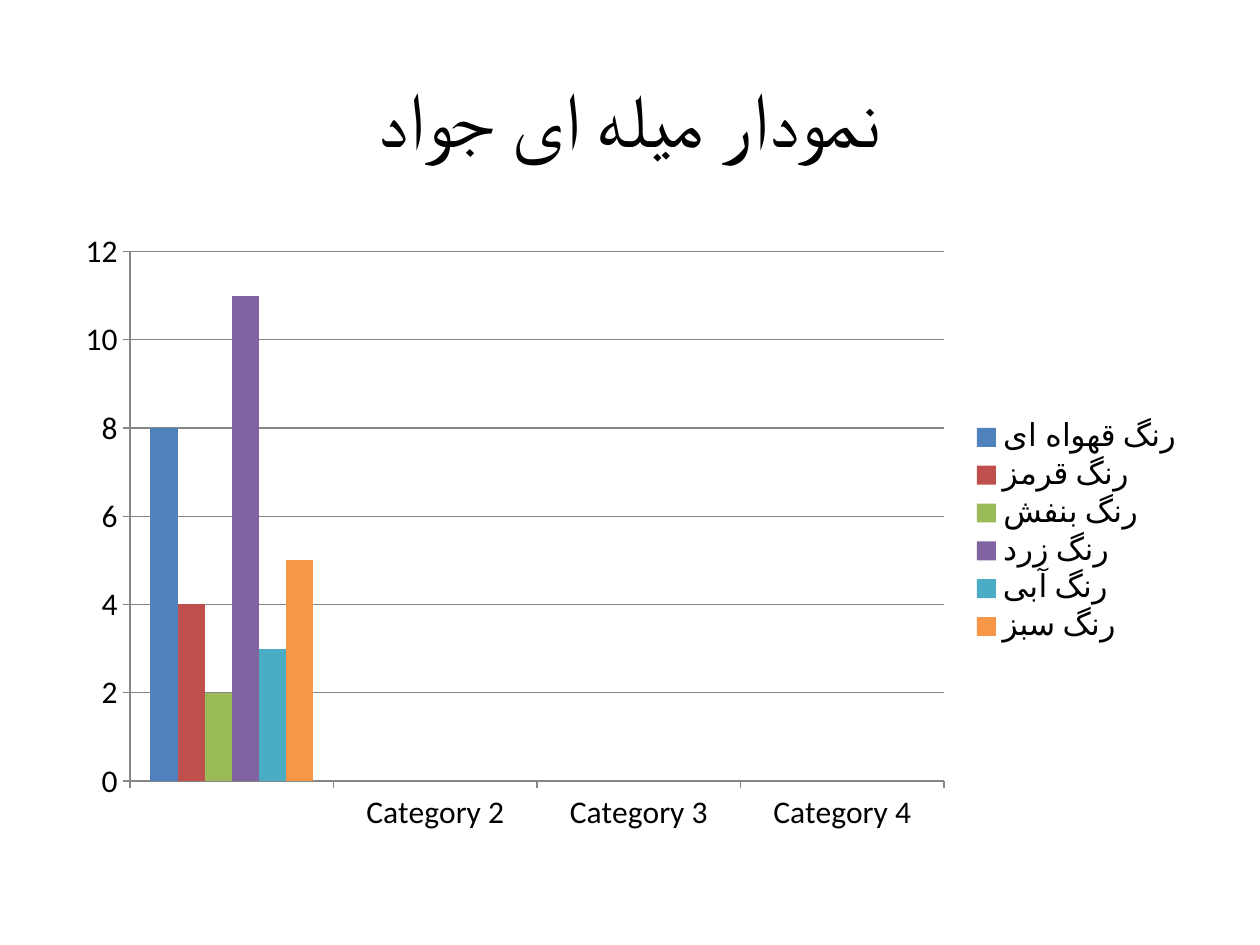
import pptx
import pptx.util
import pptx.dml.color
import pptx.chart.data
import pptx.enum.chart
import pptx.enum.text

TITLE = "نمودار میله ای جواد"
CATS = ["", "Category 2", "Category 3", "Category 4"]
BARS = [
    ("رنگ قهواه ای", 8, "4F81BD"),
    ("رنگ قرمز", 4, "C0504D"),
    ("رنگ بنفش", 2, "9BBB59"),
    ("رنگ زرد", 11, "8064A2"),
    ("رنگ آبی", 3, "4BACC6"),
    ("رنگ سبز", 5, "F79646"),
]
FONT, INK, GRID = "Calibri", "000000", "868686"
PX = 914400 // 126
WIDE, HIGH, EDGE = 1260, 945, 63
TITLE_TOP, TITLE_HIGH = 38, 157
CHART_TOP, CHART_HIGH = 220, 624


def px(*nums):
    return [pptx.util.Emu(n * PX) for n in nums]


def rgb(code):
    return pptx.dml.color.RGBColor.from_string(code)


def style(font, size):
    font.name = FONT
    font.size = pptx.util.Pt(size)
    font.color.rgb = rgb(INK)


def rule(line):
    line.color.rgb = rgb(GRID)
    line.width = pptx.util.Pt(0.75)


def add_title(slide):
    box = slide.shapes.title
    box.left, box.top, box.width, box.height = px(
        EDGE, TITLE_TOP, WIDE - 2 * EDGE, TITLE_HIGH)
    frame = box.text_frame
    frame.vertical_anchor = pptx.enum.text.MSO_ANCHOR.MIDDLE
    para = frame.paragraphs[0]
    para.alignment = pptx.enum.text.PP_ALIGN.CENTER
    para._p.get_or_add_pPr().set("rtl", "1")
    run = para.add_run()
    run.text = TITLE
    style(run.font, 44)


def add_bars(slide):
    data = pptx.chart.data.CategoryChartData()
    data.categories = CATS
    for name, val, _ in BARS:
        data.add_series(name, [val] + [None] * (len(CATS) - 1))
    kind = pptx.enum.chart.XL_CHART_TYPE.COLUMN_CLUSTERED
    place = px(EDGE, CHART_TOP, WIDE - 2 * EDGE, CHART_HIGH)
    chart = slide.shapes.add_chart(kind, *place, data).chart
    style(chart.font, 18)
    chart.has_title = False
    chart.has_legend = True
    chart.legend.position = pptx.enum.chart.XL_LEGEND_POSITION.RIGHT
    chart.legend.include_in_layout = False

    plot = chart.plots[0]
    plot.gap_width = 150
    plot.overlap = 0
    plot.vary_by_categories = False
    for bar, (_, _, code) in zip(plot.series, BARS):
        bar.invert_if_negative = False
        bar.format.fill.solid()
        bar.format.fill.fore_color.rgb = rgb(code)

    for axis in (chart.category_axis, chart.value_axis):
        axis.major_tick_mark = pptx.enum.chart.XL_TICK_MARK.OUTSIDE
        axis.minor_tick_mark = pptx.enum.chart.XL_TICK_MARK.NONE
        rule(axis.format.line)
    axis = chart.value_axis
    axis.minimum_scale, axis.maximum_scale, axis.major_unit = 0, 12, 2
    axis.has_major_gridlines = True
    rule(axis.major_gridlines.format.line)


def main():
    deck = pptx.Presentation()
    deck.slide_width, deck.slide_height = px(WIDE, HIGH)
    slide = deck.slides.add_slide(deck.slide_layouts[5])
    add_title(slide)
    add_bars(slide)
    deck.save("out.pptx")


if __name__ == "__main__":
    main()
